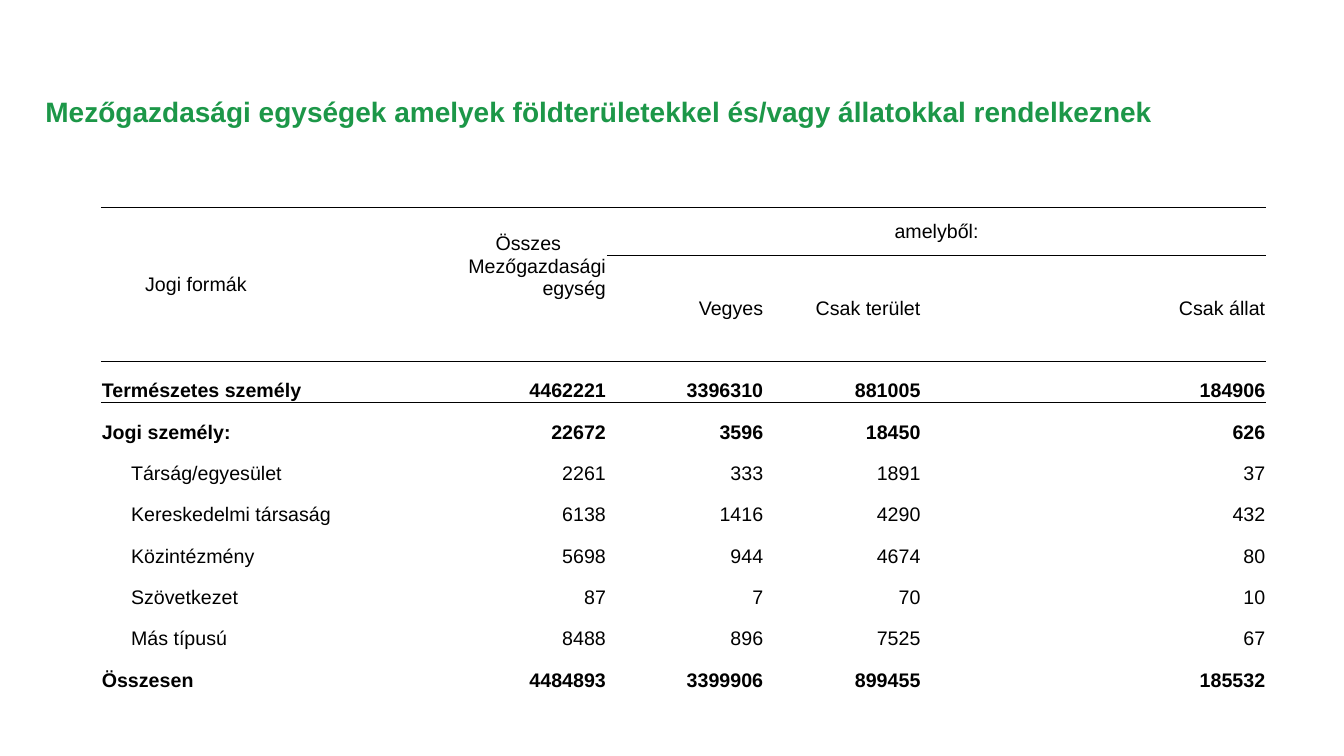
from dataclasses import dataclass
from itertools import product

from pptx import Presentation
from pptx.dml.color import RGBColor
from pptx.enum.text import MSO_ANCHOR as Anchor, MSO_AUTO_SIZE as AutoSize, PP_ALIGN as Align
from pptx.oxml import parse_xml
from pptx.oxml.ns import nsdecls
from pptx.table import _Cell as Cell
from pptx.text.text import _Paragraph as Paragraph
from pptx.util import Inches, Pt

GREEN = RGBColor(0x1C, 0x97, 0x48)
BLACK = RGBColor(0, 0, 0)
FONT = "Arial"
NO_STYLE_NO_GRID = "{2D5ABB26-0587-4C30-8999-92F81FD0307C}"
MARGIN = 0.01
COLUMN_WIDTHS = (3.46, 1.56, 1.56, 1.56, 3.42)
HEADER_HEIGHTS = (0.47, 1.05)
ROW_HEIGHT = 0.41


@dataclass
class Heading:
    row: int
    column: int
    text: str
    align: Align = Align.RIGHT
    anchor: Anchor = Anchor.MIDDLE
    left: float = MARGIN


@dataclass
class LegalForm:
    name: str
    counts: tuple[int, ...]
    main: bool = False


HEADINGS = (
    Heading(0, 0, "Jogi formák", Align.LEFT, left=0.44),
    Heading(0, 1, "Összes", Align.CENTER, Anchor.BOTTOM),
    Heading(0, 2, "amelyből:", Align.CENTER),
    Heading(1, 1, "Mezőgazdasági egység", anchor=Anchor.TOP),
    Heading(1, 2, "Vegyes"),
    Heading(1, 3, "Csak terület"),
    Heading(1, 4, "Csak állat"),
)
LEGAL_FORMS = (
    LegalForm("Természetes személy", (4462221, 3396310, 881005, 184906), True),
    LegalForm("Jogi személy:", (22672, 3596, 18450, 626), True),
    LegalForm("Társág/egyesület", (2261, 333, 1891, 37)),
    LegalForm("Kereskedelmi társaság", (6138, 1416, 4290, 432)),
    LegalForm("Közintézmény", (5698, 944, 4674, 80)),
    LegalForm("Szövetkezet", (87, 7, 70, 10)),
    LegalForm("Más típusú", (8488, 896, 7525, 67)),
    LegalForm("Összesen", (4484893, 3399906, 899455, 185532), True),
)


def add_run(paragraph: Paragraph, text: str, size: int, color: RGBColor, bold: bool) -> None:
    run = paragraph.add_run()
    run.text = text
    run.font.name = FONT
    run.font.size = Pt(size)
    run.font.bold = bold
    run.font.color.rgb = color


def write_cell(cell: Cell, text: str, align: Align, anchor: Anchor,
               left: float = MARGIN, bold: bool = False) -> None:
    cell.margin_left = Inches(left)
    cell.margin_right = cell.margin_top = Inches(MARGIN)
    cell.margin_bottom = 0
    cell.vertical_anchor = anchor
    paragraph = cell.text_frame.paragraphs[0]
    paragraph.alignment = align
    add_run(paragraph, text, 14, BLACK, bold)


def add_border(cell: Cell, side: str) -> None:
    cell._tc.get_or_add_tcPr().append(parse_xml(
        f'<a:{side} {nsdecls("a")} w="{Pt(0.5)}"><a:solidFill>'
        f'<a:srgbClr val="{BLACK}"/></a:solidFill></a:{side}>'))


def main() -> None:
    deck = Presentation()
    deck.slide_width, deck.slide_height = Inches(13.33), Inches(7.5)
    slide = deck.slides.add_slide(deck.slide_layouts[5])

    # Title
    title = slide.shapes.title
    title.left, title.top = Inches(0.35), Inches(0.4)
    title.width, title.height = Inches(12.64), Inches(1.45)
    title.text_frame.auto_size = AutoSize.NONE
    title.text_frame.vertical_anchor = Anchor.MIDDLE
    headline = title.text_frame.paragraphs[0]
    headline.alignment = Align.LEFT
    headline.line_spacing = 0.9
    add_run(headline, "Mezőgazdasági egységek amelyek földterületekkel és/vagy "
            "állatokkal rendelkeznek", 20, GREEN, True)

    # Table grid
    heights = HEADER_HEIGHTS + (ROW_HEIGHT,) * len(LEGAL_FORMS)
    frame = slide.shapes.add_table(
        len(heights), len(COLUMN_WIDTHS), Inches(1), Inches(2.06),
        Inches(sum(COLUMN_WIDTHS)), Inches(sum(heights)))
    frame._element.xpath(".//a:tableStyleId")[0].text = NO_STYLE_NO_GRID
    holdings = frame.table
    holdings.first_row = holdings.horz_banding = False
    for column, width in zip(holdings.columns, COLUMN_WIDTHS):
        column.width = Inches(width)
    for row, height in zip(holdings.rows, heights):
        row.height = Inches(height)
    holdings.cell(0, 0).merge(holdings.cell(1, 0))
    holdings.cell(0, 2).merge(holdings.cell(0, 4))

    # Rules above, inside and below the header
    for row, column in product(range(len(heights)), range(len(COLUMN_WIDTHS))):
        cell = holdings.cell(row, column)
        if row in (0, 2) or (row == 1 and column >= 2):
            add_border(cell, "lnT")
        if row == 1 or (row == 0 and column != 1):
            add_border(cell, "lnB")
        cell.fill.background()

    # Header text
    for heading in HEADINGS:
        write_cell(holdings.cell(heading.row, heading.column), heading.text,
                   heading.align, heading.anchor, heading.left)

    # Counts by legal form
    for row, form in enumerate(LEGAL_FORMS, len(HEADER_HEIGHTS)):
        write_cell(holdings.cell(row, 0), form.name, Align.LEFT, Anchor.BOTTOM,
                   MARGIN if form.main else 0.3, form.main)
        for column, count in enumerate(form.counts, 1):
            write_cell(holdings.cell(row, column), str(count), Align.RIGHT,
                       Anchor.BOTTOM, bold=form.main)

    deck.save("out.pptx")


if __name__ == "__main__":
    main()
